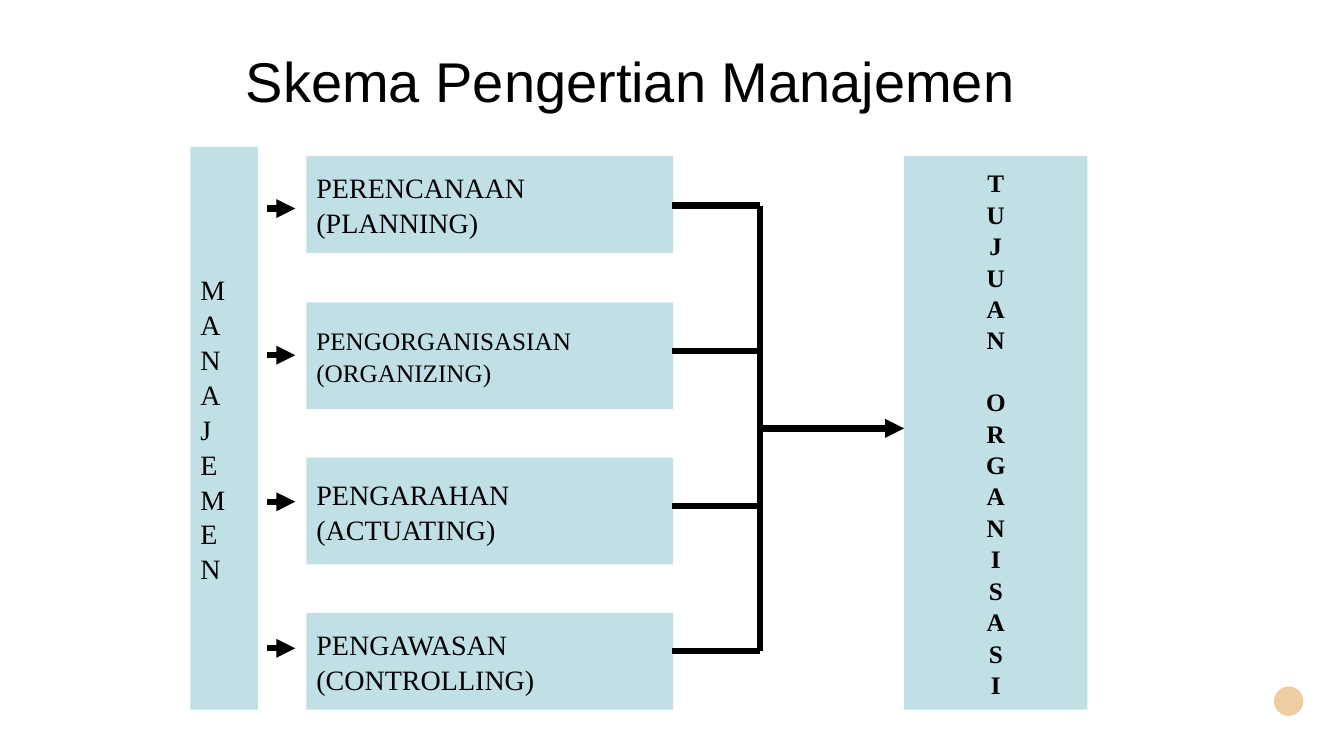
from dataclasses import dataclass

import pptx
import pptx.dml.color
import pptx.enum.shapes
import pptx.enum.text
import pptx.oxml
import pptx.oxml.ns
import pptx.util

Pt = pptx.util.Pt
SHAPE = pptx.enum.shapes.MSO_SHAPE
ALIGN = pptx.enum.text.PP_ALIGN
MIDDLE = pptx.enum.text.MSO_ANCHOR.MIDDLE


@dataclass(frozen=True)
class Theme:
    ink: str = "000000"
    panel: str = "C1E0E6"
    accent: str = "F0CDA1"
    title_font: str = "Arial"
    body_font: str = "Times New Roman"
    title_size: int = 40
    large: int = 20
    small: int = 18
    stroke: float = 4.5
    line_spacing: float = 1.04


THEME = Theme()

# Label, type size, top and height, and height of the branch leaving the box
FUNCTIONS = [
    ("PERENCANAAN\n(PLANNING)", THEME.large, 111.6, 69.1, 146.9),
    ("PENGORGANISASIAN\n(ORGANIZING)", THEME.small, 216, 76.3, 250.6),
    ("PENGARAHAN\n(ACTUATING)", THEME.large, 326.9, 76.3, 361.4),
    ("PENGAWASAN\n(CONTROLLING)", THEME.large, 437.8, 69.1, 465.1),
]


def rgb(value):
    return pptx.dml.color.RGBColor.from_string(value)


def style_text(paragraph, font_name, size, bold=False):
    for run in paragraph.runs:
        run.font.name = font_name
        run.font.size = Pt(size)
        run.font.bold = bold
        run.font.color.rgb = rgb(THEME.ink)


def add_filled(slide, kind, box, color):
    shape = slide.shapes.add_shape(kind, *map(Pt, box))
    shape.shadow.inherit = False
    shape.fill.solid()
    shape.fill.fore_color.rgb = rgb(color)
    shape.line.fill.background()
    return shape


def add_panel(slide, box, label, size, align=ALIGN.LEFT, bold=False):
    panel = add_filled(slide, SHAPE.RECTANGLE, box, THEME.panel)
    frame = panel.text_frame
    frame.word_wrap = True
    frame.vertical_anchor = MIDDLE
    frame.text = label
    for paragraph in frame.paragraphs:
        paragraph.alignment = align
        paragraph.line_spacing = THEME.line_spacing
        style_text(paragraph, THEME.body_font, size, bold)
    return panel


def add_line(slide, start, end, arrow=False):
    line = slide.shapes.add_connector(
        pptx.enum.shapes.MSO_CONNECTOR.STRAIGHT, *map(Pt, (*start, *end)))
    line.line.color.rgb = rgb(THEME.ink)
    line.line.width = Pt(THEME.stroke)
    properties = line._element.spPr
    if arrow:
        head = pptx.oxml.parse_xml(
            f'<a:tailEnd {pptx.oxml.ns.nsdecls("a")} type="triangle"/>')
        properties.find(pptx.oxml.ns.qn("a:ln")).append(head)
    properties.append(pptx.oxml.parse_xml(
        f'<a:effectLst {pptx.oxml.ns.nsdecls("a")}/>'))


def place_title(slide, box):
    title = slide.shapes.title
    title.left, title.top, title.width, title.height = map(Pt, box)
    frame = title.text_frame
    frame.text = "Skema Pengertian Manajemen"
    frame.vertical_anchor = MIDDLE
    frame.paragraphs[0].alignment = ALIGN.LEFT
    style_text(frame.paragraphs[0], THEME.title_font, THEME.title_size)


def draw_management(slide, box):
    left, top, width, height = box
    add_panel(slide, box, "\n".join("MANAJEMEN"), THEME.large)
    # Arrows towards the four functions
    arrow_left = left + width + 6.5
    for index in range(len(FUNCTIONS)):
        y = top + 44 + 104.7 * index
        add_line(slide, (arrow_left, y), (arrow_left + 20.2, y), arrow=True)


def draw_functions(slide, left, width):
    for label, size, top, height, _ in FUNCTIONS:
        add_panel(slide, (left, top, width, height), label, size)


def draw_bracket(slide, left, spine, right):
    branches = [function[-1] for function in FUNCTIONS]
    for y in branches:
        add_line(slide, (left, y), (spine, y))
    add_line(slide, (spine, branches[0]), (spine, branches[-1]))
    add_line(slide, (spine, 306), (right, 306), arrow=True)


def draw_goal(slide, box):
    first, second = "TUJUAN", "ORGANISASI"
    goal = add_panel(slide, box, "\n".join(first + second), THEME.small,
                     ALIGN.CENTER, bold=True)
    # One line of space between the two words
    goal.text_frame.paragraphs[len(first)].space_before = Pt(21.6)


def main():
    deck = pptx.Presentation()
    deck.slide_width, deck.slide_height = Pt(960), Pt(540)
    slide = deck.slides.add_slide(deck.slide_layouts.get_by_name("Title Only"))

    place_title(slide, (168.5, 27, 600, 60))
    # Corner dot
    add_filled(slide, SHAPE.OVAL, (910, 490.3, 21, 21), THEME.accent)
    # Scheme, left to right
    draw_management(slide, (136, 105, 48.2, 402))
    draw_functions(slide, 218.9, 262)
    draw_bracket(slide, 480.2, 542.9, 645.8)
    draw_goal(slide, (645.8, 111.6, 131, 395.3))

    deck.save("out.pptx")


if __name__ == "__main__":
    main()
